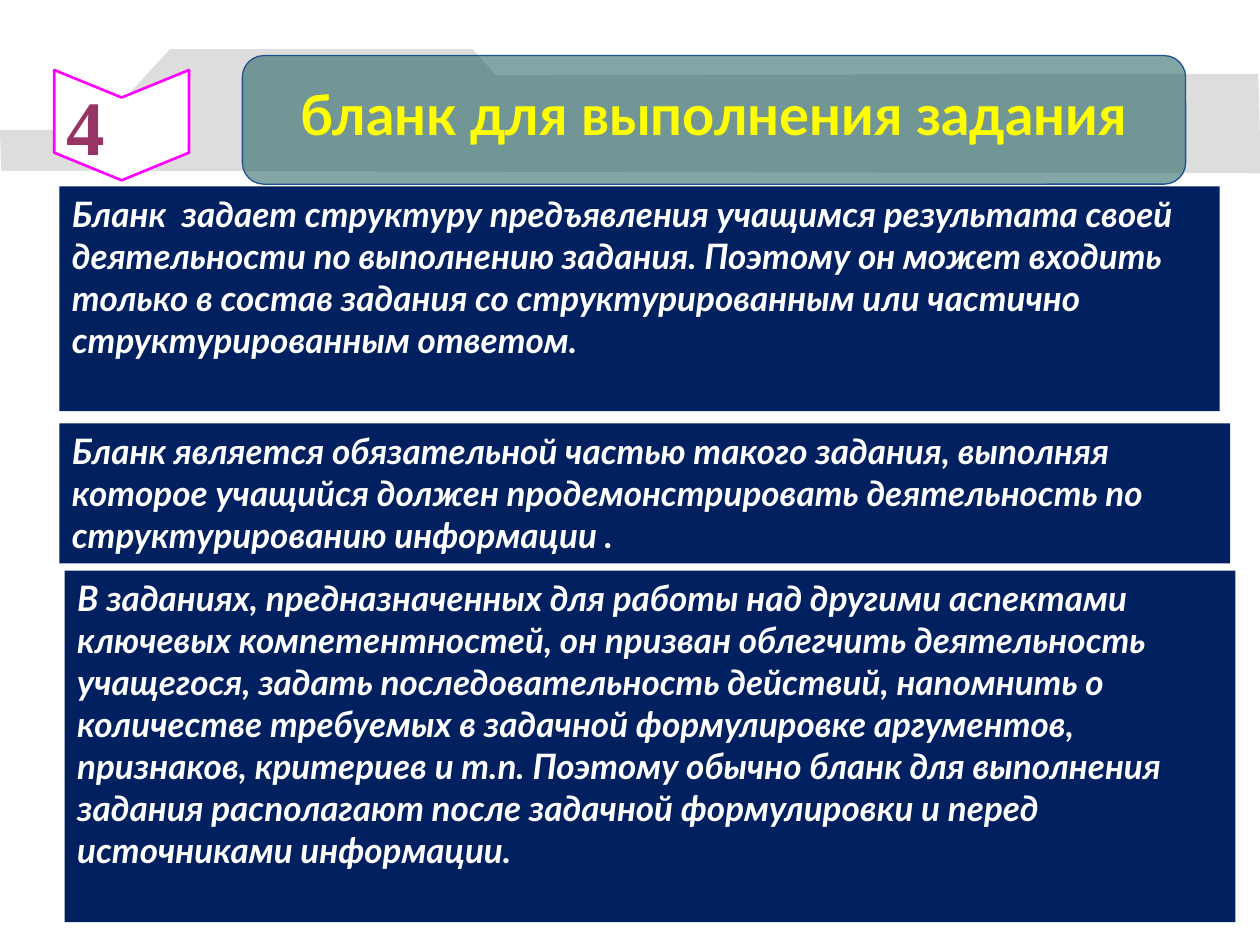
from dataclasses import dataclass

from lxml.etree import SubElement
from pptx import Presentation
from pptx.dml.color import RGBColor
from pptx.enum.shapes import MSO_SHAPE as Shape
from pptx.enum.text import MSO_ANCHOR as Anchor, PP_ALIGN as Align
from pptx.oxml.ns import qn
from pptx.util import Pt


@dataclass(frozen=True)
class Theme:
    band: str = "DDDDDD"
    paper: str = "FFFFFF"
    badge_line: str = "FF00FF"
    badge_text: str = "993366"
    title_fill: str = "135858"
    title_line: str = "1D528D"
    title_text: str = "FFFF00"
    panel: str = "002060"
    panel_text: str = "FFFFFF"
    font: str = "Lato"
    badge_font: str = "Times New Roman"
    badge_size: int = 44
    title_size: int = 32
    body_size: int = 20


THEME = Theme()

# Each panel: (left, top, width, height) in points, then its text
PANELS = [
    ((34, 106.5, 663, 128.5),
     "Бланк  задает структуру предъявления учащимся результата своей "
     "деятельности по выполнению задания. Поэтому он может входить только в "
     "состав задания со структурированным или частично структурированным "
     "ответом."),
    ((34, 242, 669, 80),
     "Бланк является обязательной частью такого задания, выполняя которое "
     "учащийся должен продемонстрировать деятельность по структурированию "
     "информации ."),
    ((37, 326, 669, 201),
     "В заданиях, предназначенных для работы над другими аспектами ключевых "
     "компетентностей, он призван облегчить деятельность учащегося, задать "
     "последовательность действий, напомнить о количестве требуемых в "
     "задачной формулировке аргументов, признаков, критериев и т.п. Поэтому "
     "обычно бланк для выполнения задания располагают после задачной "
     "формулировки и перед источниками информации."),
]


def paint(sp, fill, line=None, line_width=0.75):
    sp.shadow.inherit = False
    sp.fill.solid()
    sp.fill.fore_color.rgb = RGBColor.from_string(fill)
    if line:
        sp.line.color.rgb = RGBColor.from_string(line)
        sp.line.width = Pt(line_width)
    else:
        sp.line.fill.background()


def add_box(s, kind, box, adjust=None, **colours):
    sp = s.shapes.add_shape(kind, *(Pt(v) for v in box))
    if adjust is not None:
        sp.adjustments[0] = adjust
    paint(sp, **colours)
    return sp


def write(sp, text, size, colour, font=THEME.font, italic=False,
          align=Align.LEFT, anchor=Anchor.TOP, wrap=True, spacing=None):
    tf = sp.text_frame
    tf.word_wrap = wrap
    tf.vertical_anchor = anchor
    p = tf.paragraphs[0]
    p.alignment = align
    if spacing:
        p.line_spacing = spacing
    r = p.add_run()
    r.text = text
    r.font.name = font
    r.font.size = Pt(size)
    r.font.bold = True
    r.font.italic = italic
    r.font.color.rgb = RGBColor.from_string(colour)


def add_band(s, box):
    """Grey ribbon with a raised tab, drawn behind the heading."""
    left, top, width, height = box
    outline = [(0, 0.65), (0.076, 0.65), (0.135, 0), (0.375, 0),
               (0.393, 0.21), (0.998, 0.2), (1, 1), (0.001, 0.98)]
    points = [(Pt(left + x * width), Pt(top + y * height)) for x, y in outline]
    builder = s.shapes.build_freeform(*points[0])
    builder.add_line_segments(points[1:], close=True)
    paint(builder.convert_to_shape(), THEME.band)


def add_badge(s, box, number):
    """Chevron turned to point down, with its number kept upright."""
    sp = add_box(s, Shape.CHEVRON, box, 0.25, fill=THEME.paper,
                 line=THEME.badge_line, line_width=1.5)
    sp.rotation = 90
    write(sp, number, THEME.badge_size, THEME.badge_text, THEME.badge_font,
          align=Align.CENTER, anchor=Anchor.MIDDLE, wrap=False)
    body = sp.text_frame._txBody.bodyPr
    body.set("vert", "eaVert")
    body.set("rot", "10800000")


def add_title(s, box, text):
    sp = add_box(s, Shape.ROUNDED_RECTANGLE, box, 0.167,
                 fill=THEME.title_fill, line=THEME.title_line)
    colour = sp._element.spPr.find(qn("a:solidFill"))[0]
    SubElement(colour, qn("a:alpha"), val="53000")
    write(sp, text, THEME.title_size, THEME.title_text, align=Align.CENTER,
          anchor=Anchor.MIDDLE, wrap=False, spacing=0.8)


def add_panel(s, box, text):
    sp = add_box(s, Shape.RECTANGLE, box, fill=THEME.panel)
    write(sp, text, THEME.body_size, THEME.panel_text, italic=True)


def main():
    prs = Presentation()
    prs.slide_width, prs.slide_height = Pt(720), Pt(540)
    s = prs.slides.add_slide(prs.slide_layouts[6])
    add_band(s, (0, 28, 720.5, 71))
    add_badge(s, (38, 33, 63, 77), "4")
    add_title(s, (138.5, 31.75, 539, 73.5), "бланк для выполнения задания")
    for box, text in PANELS:
        add_panel(s, box, text)
    prs.save("out.pptx")


if __name__ == "__main__":
    main()
